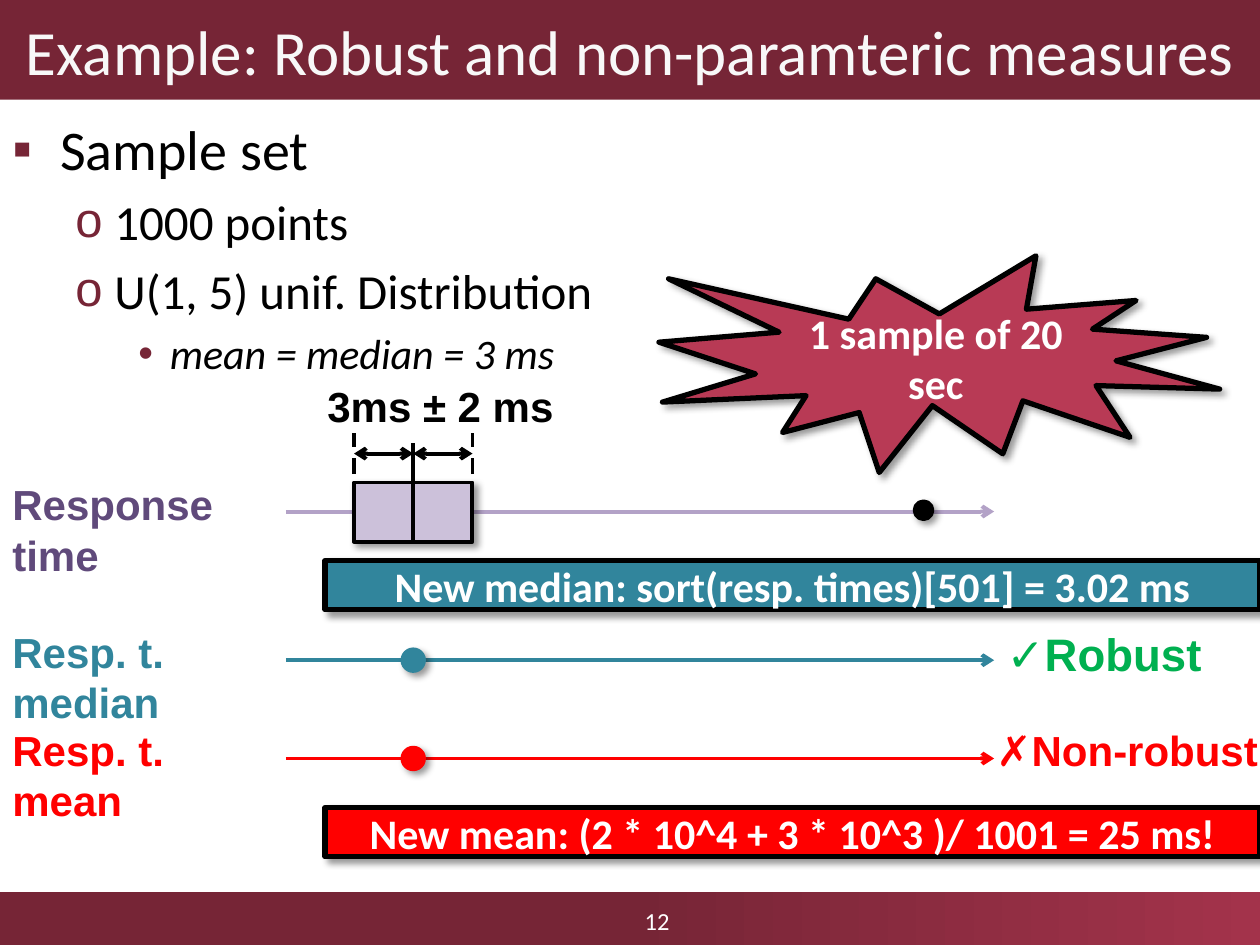
"""Build the slide on robust and non-parametric measures."""
from lxml.etree import SubElement
from pptx import Presentation
from pptx.dml.color import RGBColor
from pptx.enum.dml import MSO_LINE
from pptx.enum.shapes import MSO_CONNECTOR, MSO_SHAPE
from pptx.enum.text import MSO_ANCHOR, PP_ALIGN
from pptx.oxml.ns import qn
from pptx.util import Inches, Pt

MAROON = RGBColor(0x76, 0x25, 0x36)
ROSE = RGBColor(0xA3, 0x33, 0x4B)
CRIMSON = RGBColor(0xB8, 0x3A, 0x55)
PURPLE = RGBColor(0x60, 0x4A, 0x7B)
LILAC = RGBColor(0xB3, 0xA2, 0xC7)
PALE_LILAC = RGBColor(0xCC, 0xC1, 0xDA)
TEAL = RGBColor(0x31, 0x85, 0x9C)
RED = RGBColor(0xFF, 0, 0)
GREEN = RGBColor(0, 0xB0, 0x50)
BLACK = RGBColor(0, 0, 0)
OFF_WHITE = RGBColor(0xF8, 0xF8, 0xF8)
WHITE = RGBColor(0xFF, 0xFF, 0xFF)

TITLE = "Example: Robust and non-paramteric measures"
BULLETS = [
    (0, "Sample set"),
    (1, "1000 points"),
    (1, "U(1, 5) unif. Distribution"),
    (2, "mean = median = 3 ms"),
]
LEVELS = [("▪", 0.38, 0.38, 32), ("o", 0.81, 0.31, 28), ("•", 1.25, 0.25, 24)]
AXES = [
    ("Response time", 4.06, 3.75, 2.27, LILAC, PURPLE),
    ("Resp. t. median", 5.24, 4.92, 2.5, TEAL, TEAL),
    ("Resp. t. mean", 6.02, 5.7, 2.27, RED, RED),
]
DOTS = [
    (7.33, 4.05, 0.13, BLACK),
    (3.28, 5.24, 0.16, TEAL),
    (3.28, 6.02, 0.16, RED),
]
BANNERS = [
    ("New median: sort(resp. times)[501] = 3.02 ms", 4.45, TEAL),
    ("New mean: (2 * 10^4 + 3 * 10^3 )/ 1001 = 25 ms!", 6.41, RED),
]
NOTES = [
    ("3ms ± 2 ms", 2.5, 2.97, 2.19, 24, BLACK),
    ("✓Robust", 7.89, 4.92, 1.8, 26, GREEN),
    ("✗Non-robust", 7.81, 5.7, 2.54, 24, RED),
]
AXIS_X = 2.27, 7.89
LOW, MID, HIGH = 2.81, 3.28, 3.75
BOX_TOP, BOX_H = 3.83, 0.47

prs = Presentation()
prs.slide_width, prs.slide_height = Inches(10), Inches(7.5)
s = prs.slides.add_slide(prs.slide_layouts[6])


def add_run(p, text, size, color, font="Calibri", bold=False, italic=False):
    r = p.add_run()
    r.text = text
    r.font.name, r.font.size = font, Pt(size)
    r.font.bold, r.font.italic = bold, italic
    r.font.color.rgb = color


def fill_text(sp, text, size, color, font="Calibri", bold=False, centered=True):
    tf = sp.text_frame
    tf.word_wrap = True
    tf.vertical_anchor = MSO_ANCHOR.MIDDLE if centered else MSO_ANCHOR.TOP
    p = tf.paragraphs[0]
    p.alignment = PP_ALIGN.CENTER if centered else PP_ALIGN.LEFT
    add_run(p, text, size, color, font, bold)


def add_box(kind, x, y, w, h, fill, line=None, width=3):
    sp = s.shapes.add_shape(kind, Inches(x), Inches(y), Inches(w), Inches(h))
    sp.shadow.inherit = False
    sp.fill.solid()
    sp.fill.fore_color.rgb = fill
    if line is None:
        sp.line.fill.background()
        return sp
    sp.line.color.rgb, sp.line.width = line, Pt(width)
    effects = sp._element.spPr.find(qn("a:effectLst"))
    shadow = SubElement(effects, qn("a:outerShdw"), blurRad=str(Pt(4)),
                        dist=str(Pt(3)), dir="2700000", rotWithShape="0")
    tint = SubElement(shadow, qn("a:srgbClr"), val=str(BLACK))
    SubElement(tint, qn("a:alpha"), val="40000")
    return sp


def add_text(x, y, w, h):
    return s.shapes.add_textbox(Inches(x), Inches(y), Inches(w), Inches(h))


def add_line(x1, y1, x2, y2, color=BLACK, ends=(), dashed=False):
    c = s.shapes.add_connector(MSO_CONNECTOR.STRAIGHT, Inches(x1), Inches(y1),
                               Inches(x2), Inches(y2))
    c.line.color.rgb, c.line.width = color, Pt(2.25)
    if dashed:
        c.line.dash_style = MSO_LINE.DASH
    for end in ends:
        SubElement(c.line._get_or_add_ln(), qn(f"a:{end}"), type="arrow")
    SubElement(c._element.spPr, qn("a:effectLst"))


footer = add_box(MSO_SHAPE.RECTANGLE, 0, 7.08, 10, 0.42, MAROON)
footer.fill.gradient()
footer.fill.gradient_angle = 0
stops = footer.fill.gradient_stops
for stop, color, position in zip(stops, (MAROON, ROSE), (0.5, 1)):
    stop.color.rgb, stop.position = color, position
fill_text(add_text(3.59, 7.11, 3.25, 0.39), "12", 14, WHITE)

header = add_box(MSO_SHAPE.RECTANGLE, 0, 0, 10, 0.79, MAROON)
fill_text(header, TITLE, 36, OFF_WHITE)

tf = add_text(0, 0.86, 9.69, 6.05).text_frame
tf.word_wrap = True
for i, (level, text) in enumerate(BULLETS):
    char, margin, hang, size = LEVELS[level]
    p = tf.add_paragraph() if i else tf.paragraphs[0]
    p.level = level
    if i:
        p.space_before = Pt(size * 0.2)
    pPr = p._p.get_or_add_pPr()
    pPr.set("marL", str(Inches(margin)))
    pPr.set("indent", str(-Inches(hang)))
    SubElement(SubElement(pPr, qn("a:buClr")), qn("a:srgbClr"), val=str(MAROON))
    SubElement(pPr, qn("a:buFont"), typeface="Arial")
    SubElement(pPr, qn("a:buChar"), char=char)
    add_run(p, text, size, BLACK, italic=level == 2)

for label, y, label_y, label_w, color, label_color in AXES:
    add_line(AXIS_X[0], y, AXIS_X[1], y, color, ["tailEnd"])
    fill_text(add_text(0, label_y, label_w, 0.5), label, 24, label_color,
              "Arial", True, False)

add_box(MSO_SHAPE.RECTANGLE, LOW, BOX_TOP, HIGH - LOW, BOX_H, PALE_LILAC, BLACK, 2.25)
add_line(MID, BOX_TOP + BOX_H, MID, 3.52)
for edge in (LOW, HIGH):
    add_line(edge, 3.98, edge, 3.44, dashed=True)
for start, end in ((LOW, MID), (MID, HIGH)):
    add_line(start, 3.6, end, 3.6, ends=["headEnd", "tailEnd"])

for x, y, d, color in DOTS:
    add_box(MSO_SHAPE.OVAL, x - d / 2, y - d / 2, d, d, color, color)

burst = add_box(MSO_SHAPE.EXPLOSION1, 5.23, 2.03, 4.45, 1.72, CRIMSON, BLACK)
fill_text(burst, "1 sample of 20 sec", 24, WHITE, bold=True)

for text, y, color in BANNERS:
    banner = add_box(MSO_SHAPE.RECTANGLE, 2.58, y, 7.42, 0.39, color, BLACK)
    fill_text(banner, text, 24, WHITE, bold=True)

for text, x, y, w, size, color in NOTES:
    fill_text(add_text(x, y, w, 0.5), text, size, color, "Arial", True, False)

prs.save("out.pptx")
